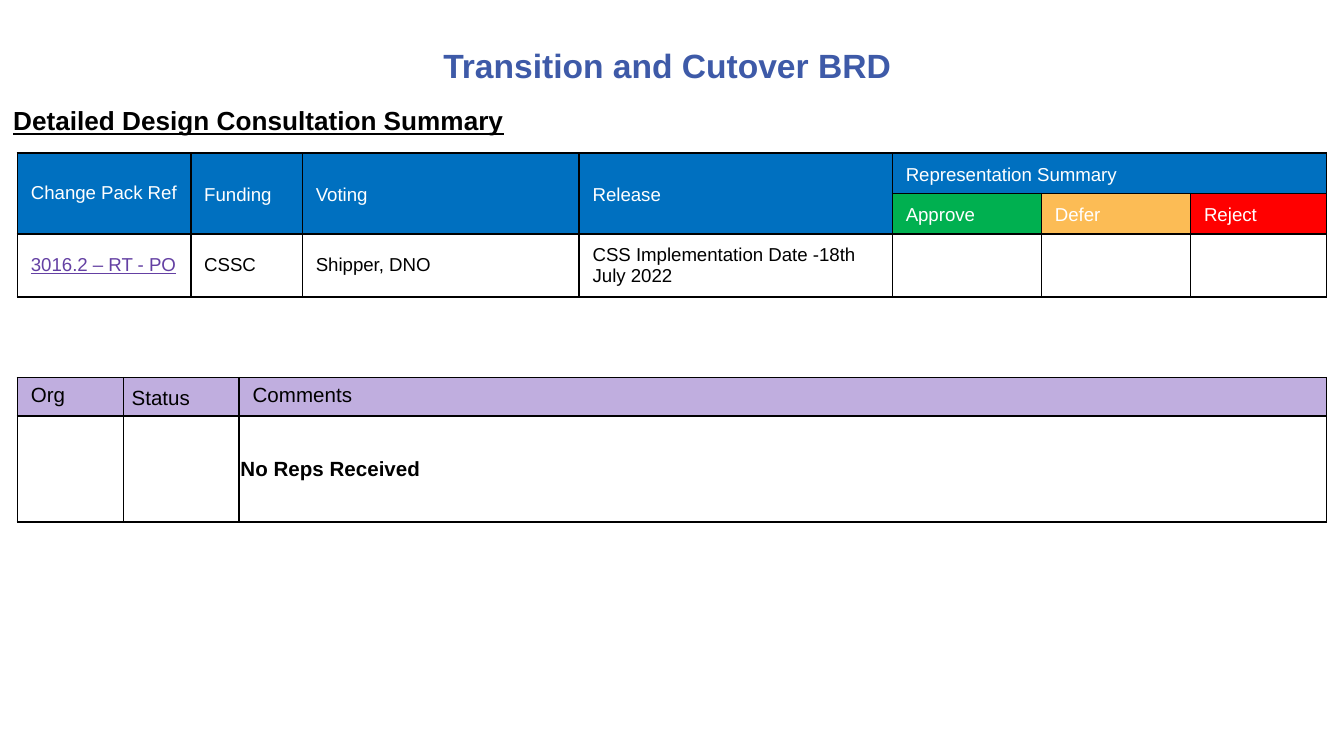
import pptx
import pptx.dml.color
import pptx.enum.text
import pptx.oxml
import pptx.oxml.ns
import pptx.util

Inches, Pt = pptx.util.Inches, pptx.util.Pt
RGB = pptx.dml.color.RGBColor.from_string
MIDDLE = pptx.enum.text.MSO_ANCHOR.MIDDLE
TOP = pptx.enum.text.MSO_ANCHOR.TOP
COLORS = {
    "title": "3E5AA8", "black": "000000", "white": "FFFFFF", "header": "0070C0",
    "approve": "00B050", "defer": "FCBC55", "reject": "FF0000",
    "link": "6440A3", "comments": "C0AEDF",
}


def write(tf, text, size, color, bold=False, underline=False):
    p = tf.paragraphs[0]
    if text:
        p.add_run().text = text
    p.font.name, p.font.size = "Arial", Pt(size)
    p.font.bold, p.font.underline = bold, underline
    p.font.color.rgb = RGB(COLORS[color])
    return p


def add_grid(s, top, cols, rows):
    """Add a plain table whose cells all have thin black borders."""
    table = s.shapes.add_table(len(rows), len(cols), Inches(0.13), Inches(top),
                               Inches(sum(cols)), Inches(sum(rows))).table
    table.first_row = table.horz_banding = False
    for column, width in zip(table.columns, cols):
        column.width = Inches(width)
    for row, height in zip(table.rows, rows):
        row.height = Inches(height)
    for cell in table.iter_cells():
        cell.vertical_anchor = MIDDLE
        tcPr = cell._tc.get_or_add_tcPr()
        for side in ("lnL", "lnR", "lnT", "lnB"):
            tcPr.append(pptx.oxml.parse_xml(
                f'<a:{side} {pptx.oxml.ns.nsdecls("a")} w="12700"><a:solidFill>'
                f'<a:srgbClr val="{COLORS["black"]}"/></a:solidFill></a:{side}>'))
        cell.fill.background()
    return table


prs = pptx.Presentation()
prs.slide_width = Inches(10)
prs.slide_height = prs.slide_width * 9 // 16
s = prs.slides.add_slide(prs.slide_layouts[6])

# Headings
tf = s.shapes.add_textbox(Inches(0.03), Inches(0.04), Inches(9.87), Inches(0.89)).text_frame
tf.word_wrap, tf.vertical_anchor = True, MIDDLE
p = write(tf, "Transition and Cutover BRD", 18, "title", bold=True)
p.alignment = pptx.enum.text.PP_ALIGN.CENTER

tf = s.shapes.add_textbox(0, Inches(0.73), Inches(4.77), Inches(0.34)).text_frame
tf.word_wrap = True
write(tf, "Detailed Design Consultation Summary", 14, "black", bold=True, underline=True)

# Change pack summary
summary = add_grid(s, 1.14, [1.29, 0.83, 2.06, 2.33, 1.11, 1.11, 1.01], [0.3, 0.3, 0.47])
header_fills = [["header"] * 7, ["header"] * 4 + ["approve", "defer", "reject"]]
for r, fills in enumerate(header_fills):
    for c, fill in enumerate(fills):
        cell = summary.cell(r, c)
        cell.fill.solid()
        cell.fill.fore_color.rgb = RGB(COLORS[fill])
for c in range(4):
    summary.cell(0, c).merge(summary.cell(1, c))
summary.cell(0, 4).merge(summary.cell(0, 6))

summary_text = [
    ["Change Pack Ref", "Funding", "Voting", "Release", "Representation Summary", "", ""],
    ["", "", "", "", "Approve", "Defer", "Reject"],
    ["3016.2 – RT - PO", "CSSC", "Shipper, DNO", "CSS Implementation Date -18th July 2022", "", "", ""],
]
for r, texts in enumerate(summary_text):
    for c, text in enumerate(texts):
        is_header, is_link = r < 2, (r, c) == (2, 0)
        color = "white" if is_header else "link" if is_link else "black"
        p = write(summary.cell(r, c).text_frame, text, 10, color, underline=is_link)
        if is_header and (r, c) != (0, 0):
            p.line_spacing = 1.15

# Representation comments
comments = add_grid(s, 2.81, [0.79, 0.86, 8.09], [0.28, 0.79])
for c, text in enumerate(["Org", "Status", "Comments"]):
    cell = comments.cell(0, c)
    cell.fill.solid()
    cell.fill.fore_color.rgb = RGB(COLORS["comments"])
    p = write(cell.text_frame, text, 11, "black")
    if text == "Status":
        p.line_spacing = 1.15
        cell.margin_left = cell.margin_right = Inches(0.06)
        cell.margin_top = cell.margin_bottom = 0
    else:
        cell.vertical_anchor = TOP

cell = comments.cell(1, 2)
cell.margin_left = cell.margin_right = cell.margin_top = Inches(0.01)
cell.margin_bottom = 0
write(cell.text_frame, "No Reps Received", 11, "black", bold=True)

prs.save("out.pptx")
